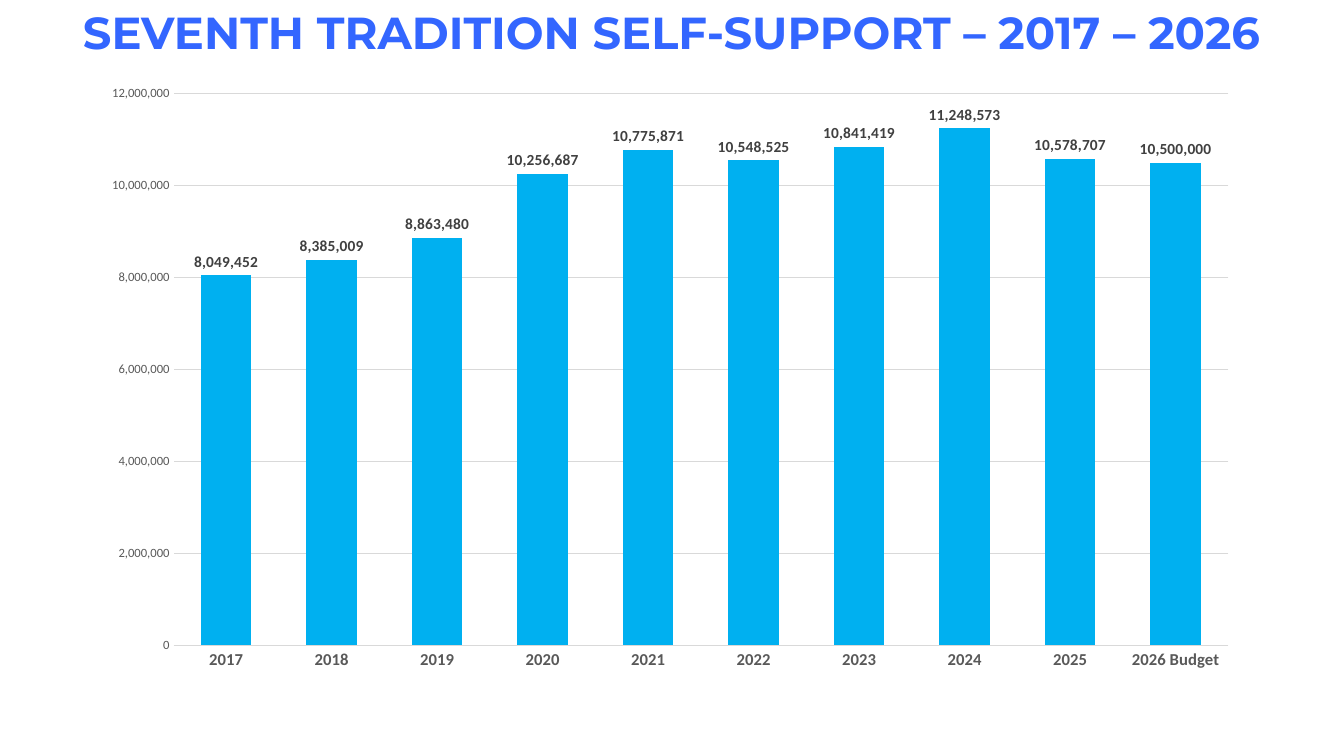
"""Build the Seventh Tradition self-support slide with its yearly column chart."""
from dataclasses import dataclass

import pptx
import pptx.chart.data
import pptx.dml.color
import pptx.enum.chart
import pptx.enum.text
import pptx.oxml
import pptx.oxml.ns
import pptx.util

Pt = pptx.util.Pt
NUMBER_FORMAT = "#,##0"
CONTRIBUTIONS = {
    "2017": 8049452,
    "2018": 8385009,
    "2019": 8863480,
    "2020": 10256687,
    "2021": 10775871,
    "2022": 10548525,
    "2023": 10841419,
    "2024": 11248573,
    "2025": 10578707,
    "2026 Budget": 10500000,
}


@dataclass(frozen=True)
class Theme:
    title_font: str = "Montserrat"
    chart_font: str = "Calibri"
    title_color: str = "3366FF"
    bar_color: str = "00B0F0"
    grid_color: str = "D9D9D9"
    axis_color: str = "595959"
    label_color: str = "404040"
    text_color: str = "000000"
    title_size: float = 32
    chart_size: float = 10
    category_size: float = 11.9
    value_size: float = 9
    label_size: float = 11
    line_width: float = 0.75


class SlideBuilder:
    def __init__(self, prs, theme):
        self.theme = theme
        self.s = prs.slides.add_slide(prs.slide_layouts[5])

    def rgb(self, color):
        return pptx.dml.color.RGBColor.from_string(color)

    def style_font(self, font, name, size, color, bold=False):
        font.name = name
        font.size = Pt(size)
        font.bold = bold
        font.color.rgb = self.rgb(color)

    def style_line(self, line):
        line.color.rgb = self.rgb(self.theme.grid_color)
        line.width = Pt(self.theme.line_width)

    def title(self, text, left, top, width, height):
        t = self.theme
        sp = self.s.shapes.title
        sp.left, sp.top, sp.width, sp.height = map(Pt, (left, top, width, height))
        tf = sp.text_frame
        tf.text = text
        tf.word_wrap = True
        tf.auto_size = pptx.enum.text.MSO_AUTO_SIZE.SHAPE_TO_FIT_TEXT
        tf.vertical_anchor = pptx.enum.text.MSO_ANCHOR.TOP
        p = tf.paragraphs[0]
        p.alignment = pptx.enum.text.PP_ALIGN.CENTER
        self.style_font(p.runs[0].font, t.title_font, t.title_size, t.title_color, True)

    def column_chart(self, values, left, top, width, height):
        t = self.theme
        data = pptx.chart.data.CategoryChartData(number_format=NUMBER_FORMAT)
        data.categories = list(values)
        data.add_series("Series 1", list(values.values()))
        chart = self.s.shapes.add_chart(
            pptx.enum.chart.XL_CHART_TYPE.COLUMN_CLUSTERED,
            *map(Pt, (left, top, width, height)), data).chart
        chart.has_title = False
        chart.has_legend = False
        self.style_font(chart.font, t.chart_font, t.chart_size, t.text_color)

        plot = chart.plots[0]
        plot.gap_width = 109
        plot.overlap = -39
        plot.vary_by_categories = False
        fill = plot.series[0].format.fill
        fill.solid()
        fill.fore_color.rgb = self.rgb(t.bar_color)

        labels = plot.series[0].data_labels
        labels.show_value = True
        labels.position = pptx.enum.chart.XL_LABEL_POSITION.OUTSIDE_END
        labels.number_format = NUMBER_FORMAT
        labels.number_format_is_linked = False
        self.style_font(labels.font, t.chart_font, t.label_size, t.label_color, True)

        for axis, size, bold in ((chart.category_axis, t.category_size, True),
                                 (chart.value_axis, t.value_size, False)):
            axis.major_tick_mark = pptx.enum.chart.XL_TICK_MARK.NONE
            axis.minor_tick_mark = pptx.enum.chart.XL_TICK_MARK.NONE
            self.style_font(axis.tick_labels.font, t.chart_font, size, t.axis_color, bold)
        self.style_line(chart.category_axis.format.line)
        axis = chart.value_axis
        axis.minimum_scale, axis.maximum_scale, axis.major_unit = 0, 12000000, 2000000
        axis.tick_labels.number_format = NUMBER_FORMAT
        axis.tick_labels.number_format_is_linked = False
        axis.format.line.fill.background()
        axis.has_major_gridlines = True
        self.style_line(axis.major_gridlines.format.line)
        self.place_plot(chart, x=0.07, y=0.03, w=0.91, h=0.91)

    def place_plot(self, chart, **fractions):
        ns = pptx.oxml.ns
        area = chart.element.find(".//" + ns.qn("c:plotArea"))
        for old in area.findall(ns.qn("c:layout")):
            area.remove(old)
        sizes = "".join(f'<c:{k} val="{v}"/>' for k, v in fractions.items())
        area.insert(0, pptx.oxml.parse_xml(
            f'<c:layout {ns.nsdecls("c")}><c:manualLayout>'
            '<c:layoutTarget val="inner"/><c:xMode val="edge"/><c:yMode val="edge"/>'
            f'{sizes}</c:manualLayout></c:layout>'))


def main():
    prs = pptx.Presentation()
    prs.slide_width, prs.slide_height = Pt(960), Pt(540)
    slide = SlideBuilder(prs, Theme())
    slide.title("SEVENTH TRADITION SELF-SUPPORT – 2017 – 2026", 0, 0, 960, 46)
    slide.column_chart(CONTRIBUTIONS, 66, 54, 828, 433)
    prs.save("out.pptx")


if __name__ == "__main__":
    main()
